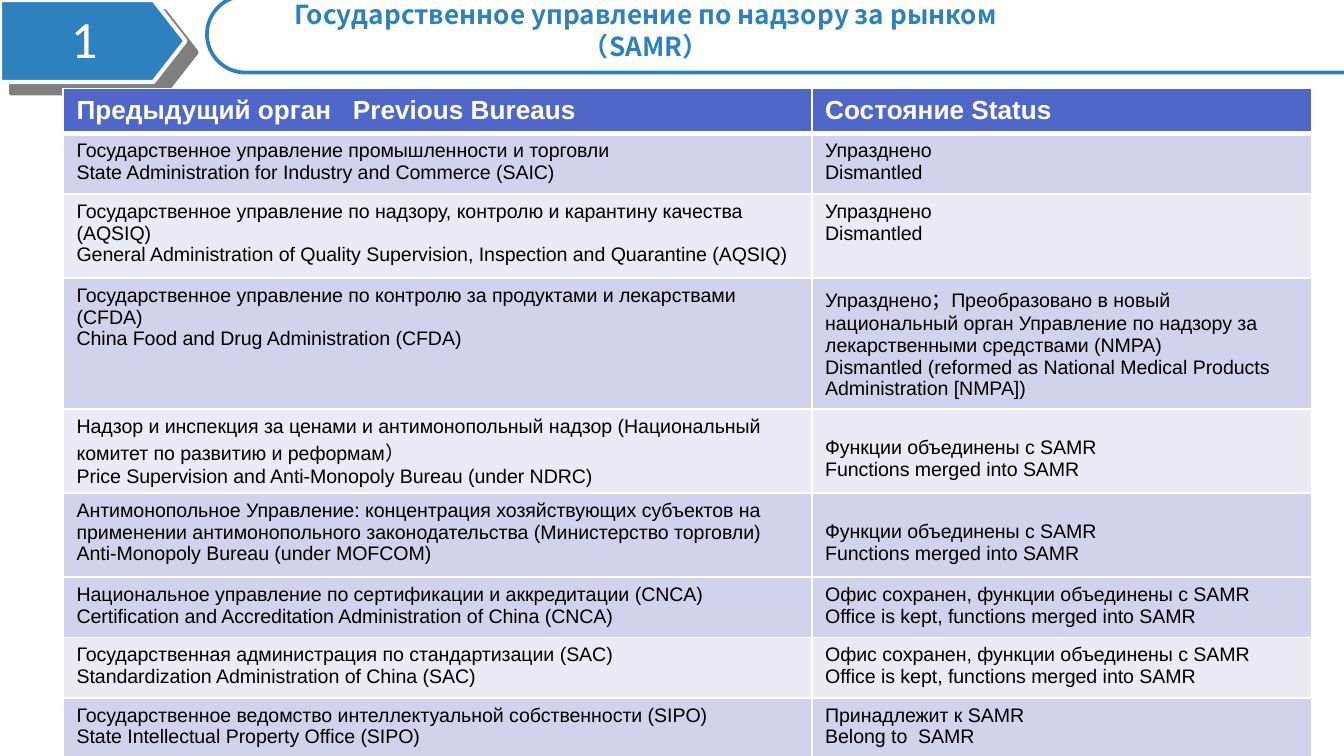
import math

from lxml import etree
from pptx import Presentation
from pptx import util as u
from pptx.dml.color import RGBColor
from pptx.enum import shapes, text
from pptx.oxml import ns

BLUE, WHITE, BLACK = "2D81BF", "FFFFFF", "000000"
HEADER, DARK_BAND, LIGHT_BAND = "4E67C8", "D0D3EB", "E9EBF5"

HEADINGS = ("Предыдущий орган   Previous Bureaus", "Состояние Status")
DISMANTLED = "Упразднено\nDismantled"
MERGED = "Функции объединены с SAMR\nFunctions merged into SAMR"
KEPT = "Офис сохранен, функции объединены с SAMR\nOffice is kept, functions merged into SAMR"

# Row height, band colour, bureau, status
ROWS = [
    (0.45, DARK_BAND,
     "Государственное управление промышленности и торговли\n"
     "State Administration for Industry and Commerce (SAIC)", DISMANTLED),
    (0.62, LIGHT_BAND,
     "Государственное управление по надзору, контролю и карантину качества (AQSIQ)\n"
     "General Administration of Quality Supervision, Inspection and Quarantine (AQSIQ)",
     DISMANTLED),
    (0.97, DARK_BAND,
     "Государственное управление по контролю за продуктами и лекарствами (CFDA)\n"
     "China Food and Drug Administration (CFDA)",
     "Упразднено；Преобразовано в новый национальный орган Управление по надзору "
     "за лекарственными средствами (NMPA)\n"
     "Dismantled (reformed as National Medical Products Administration [NMPA])"),
    (0.62, LIGHT_BAND,
     "Надзор и инспекция за ценами и антимонопольный надзор (Национальный комитет "
     "по развитию и реформам）\n"
     "Price Supervision and Anti-Monopoly Bureau (under NDRC)", MERGED),
    (0.62, DARK_BAND,
     "Антимонопольное Управление: концентрация хозяйствующих субъектов на применении "
     "антимонопольного законодательства (Министерство торговли)\n"
     "Anti-Monopoly Bureau (under MOFCOM)", MERGED),
    (0.45, DARK_BAND,
     "Национальное управление по сертификации и аккредитации (CNCA)\n"
     "Certification and Accreditation Administration of China (CNCA)", KEPT),
    (0.45, LIGHT_BAND,
     "Государственная администрация по стандартизации (SAC)\n"
     "Standardization Administration of China (SAC)", KEPT),
    (0.45, DARK_BAND,
     "Государственное ведомство интеллектуальной собственности (SIPO)\n"
     "State Intellectual Property Office (SIPO)",
     "Принадлежит к SAMR\nBelong to  SAMR"),
]


def rgb(value):
    return RGBColor.from_string(value)


def add_xml(parent, tag, **attrs):
    return etree.SubElement(parent, ns.qn(tag), {k: str(v) for k, v in attrs.items()})


class Deck:
    def __init__(self):
        self.prs = Presentation()
        self.prs.slide_width = u.Inches(10)
        self.prs.slide_height = u.Inches(10 * 9 / 16)
        self.s = self.prs.slides.add_slide(self.prs.slide_layouts[5])

    def font(self, p, size, color, name="Arial", bold=False):
        p.font.size, p.font.name, p.font.bold = u.Pt(size), name, bold
        p.font.color.rgb = rgb(color)

    def place(self, sp, *box):
        sp.left, sp.top, sp.width, sp.height = map(u.Inches, box)

    def title(self, words, *box):
        sp = self.s.shapes.title
        self.place(sp, *box)
        tf = sp.text_frame
        tf.text, tf.word_wrap = words, True
        tf.auto_size = text.MSO_AUTO_SIZE.NONE
        tf.vertical_anchor = text.MSO_ANCHOR.MIDDLE
        p = tf.paragraphs[0]
        p.alignment, p.line_spacing = text.PP_ALIGN.CENTER, 1.0
        self.font(p, 14, BLUE, "Noto Sans CJK SC", True)

    def title_frame(self, left, top, right, bottom):
        radius = (bottom - top) / 2
        cx, cy = left + radius, top + radius
        steps = 32
        arc = [(cx - radius * math.sin(a), cy + radius * math.cos(a))
               for a in (math.pi * i / steps for i in range(steps + 1))]
        points = [(u.Inches(x), u.Inches(y))
                  for x, y in [(right, top), (right, bottom)] + arc]
        builder = self.s.shapes.build_freeform(*points[0])
        builder.add_line_segments(points[1:], close=True)
        sp = builder.convert_to_shape()
        sp.shadow.inherit = False
        sp.fill.background()
        sp.line.color.rgb, sp.line.width = rgb(BLUE), u.Pt(2)

    def number_tag(self, *box):
        sp = self.s.shapes.add_shape(shapes.MSO_SHAPE.PENTAGON, *map(u.Inches, box))
        sp.adjustments[0] = 0.39
        sp.fill.solid()
        sp.fill.fore_color.rgb = rgb(BLUE)
        sp.line.color.rgb, sp.line.width = rgb("F8F8F8"), u.Pt(2.25)
        sp.shadow.inherit = False
        effects = sp._element.spPr.find(ns.qn("a:effectLst"))
        shadow = add_xml(effects, "a:outerShdw", blurRad=0, dist=u.Pt(8.5),
                         dir=45 * 60000, algn="tl", rotWithShape=0)
        add_xml(add_xml(shadow, "a:srgbClr", val=BLACK), "a:alpha", val=50000)

    def label(self, words, size, *box):
        tf = self.s.shapes.add_textbox(*map(u.Inches, box)).text_frame
        tf.text, tf.word_wrap = words, False
        tf.auto_size = text.MSO_AUTO_SIZE.SHAPE_TO_FIT_TEXT
        self.font(tf.paragraphs[0], size, WHITE, "Calibri")

    def borders(self, cell, **widths):
        tc_pr = cell._tc.get_or_add_tcPr()
        for i, (side, width) in enumerate(widths.items()):
            ln = add_xml(tc_pr, f"a:ln{side}", w=u.Pt(width))
            add_xml(add_xml(ln, "a:solidFill"), "a:srgbClr", val=WHITE)
            tc_pr.insert(i, ln)

    def cell(self, cell, words, fill, size, color, bold, top, bottom):
        cell.text = words
        for p in cell.text_frame.paragraphs:
            self.font(p, size, color, bold=bold)
        if words == MERGED:
            cell.margin_top = u.Inches(0.21)
        cell.fill.solid()
        cell.fill.fore_color.rgb = rgb(fill)
        self.borders(cell, L=1, R=1, T=top, B=bottom)

    def table(self, left, top, widths, header_height):
        heights = [header_height] + [row[0] for row in ROWS]
        box = (left, top, sum(widths), sum(heights))
        table = self.s.shapes.add_table(len(heights), len(widths),
                                        *map(u.Inches, box)).table
        for column, width in zip(table.columns, widths):
            column.width = u.Inches(width)
        for row, height in zip(table.rows, heights):
            row.height = u.Inches(height)
        for c, words in enumerate(HEADINGS):
            self.cell(table.cell(0, c), words, HEADER, 14, WHITE, True, 1, 3)
        for r, (_, band, *entries) in enumerate(ROWS, 1):
            for c, words in enumerate(entries):
                self.cell(table.cell(r, c), words, band, 10.5, BLACK, False,
                          3 if r == 1 else 1, 1)


def main():
    deck = Deck()
    # Heading band
    deck.title_frame(1.54, -0.03, 10.03, 0.54)
    deck.number_tag(0, 0, 1.38, 0.61)
    deck.title("Государственное управление по надзору за рынком（SAMR）", 1.85, 0, 5.91, 0.45)
    deck.label("1", 28, 0.43, 0, 0.4, 0.57)
    # Bureaus and their status
    deck.table(0.47, 0.66, (5.57, 3.72), 0.33)
    deck.prs.save("out.pptx")


if __name__ == "__main__":
    main()
